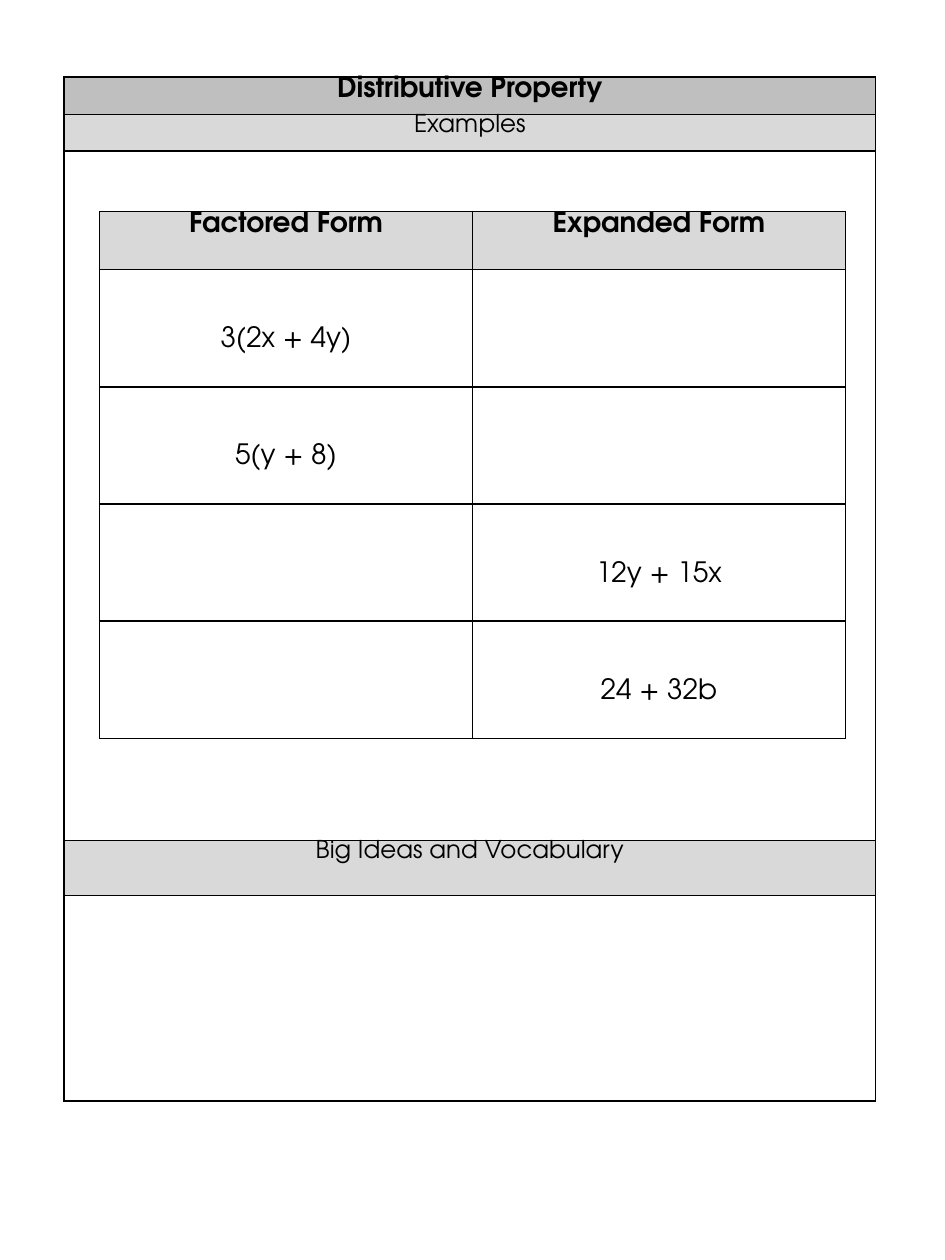
from lxml.etree import SubElement
from pptx import Presentation
from pptx.dml.color import RGBColor
from pptx.enum.text import MSO_ANCHOR, PP_ALIGN
from pptx.oxml.ns import qn
from pptx.util import Inches, Pt

FONT = "TeX Gyre Adventor"
COLORS = {"ink": "000000", "title": "BFBFBF", "heading": "D9D9D9", "paper": "FFFFFF"}


def add_borders(cell):
    """Draw a 1 pt line on all four sides; call before filling the cell."""
    properties = cell._tc.get_or_add_tcPr()
    for side in ("a:lnL", "a:lnR", "a:lnT", "a:lnB"):
        line = SubElement(properties, qn(side), w=str(Pt(1)))
        fill = SubElement(line, qn("a:solidFill"))
        SubElement(fill, qn("a:srgbClr"), val=COLORS["ink"])


def add_grid(slide, left, top, widths, heights):
    """Add a plain bordered table without a banded style."""
    table = slide.shapes.add_table(
        len(heights), len(widths), Inches(left), Inches(top),
        Inches(sum(widths)), Inches(sum(heights))).table
    table.first_row = table.horz_banding = False
    for column, width in zip(table.columns, widths):
        column.width = Inches(width)
    for row, height in zip(table.rows, heights):
        row.height = Inches(height)
    for cell in table.iter_cells():
        cell.margin_top = cell.margin_bottom = 0
        add_borders(cell)
        fill_cell(cell, "paper")
    return table


def fill_cell(cell, color):
    cell.fill.solid()
    cell.fill.fore_color.rgb = RGBColor.from_string(COLORS[color])


def write_cell(cell, text, size=16, bold=False):
    cell.text = text
    paragraph = cell.text_frame.paragraphs[0]
    paragraph.alignment = PP_ALIGN.CENTER
    paragraph.font.name = FONT
    paragraph.font.size = Pt(size)
    paragraph.font.bold = bold
    paragraph.font.color.rgb = RGBColor.from_string(COLORS["ink"])


def add_page_frame(slide):
    table = add_grid(slide, 0.51, 0.61, [6.44], [0.3, 0.29, 5.47, 0.44, 1.63])
    headings = [
        (0, "Distributive Property", "title", 16, True),
        (1, "Examples", "heading", 14, False),
        (3, "Big Ideas and Vocabulary", "heading", 14, False),
    ]
    for row, text, color, size, bold in headings:
        cell = table.cell(row, 0)
        fill_cell(cell, color)
        write_cell(cell, text, size, bold)


def add_examples(slide):
    rows = [("3(2x + 4y)", ""), ("5(y + 8)", ""), ("", "12y + 15x"), ("", "24 + 32b")]
    table = add_grid(slide, 0.79, 1.68, [2.96] * 2, [0.46] + [0.93] * len(rows))
    for column, text in enumerate(("Factored Form", "Expanded Form")):
        cell = table.cell(0, column)
        fill_cell(cell, "heading")
        write_cell(cell, text, bold=True)
    for row, expressions in enumerate(rows, start=1):
        for column, text in enumerate(expressions):
            if text:
                cell = table.cell(row, column)
                cell.vertical_anchor = MSO_ANCHOR.MIDDLE
                cell.margin_top = Inches(0.19)
                write_cell(cell, text)


def main():
    presentation = Presentation()
    presentation.slide_width = Inches(7.5)
    presentation.slide_height = Inches(10)
    slide = presentation.slides.add_slide(presentation.slide_layouts[6])

    # Worksheet frame, then the table of examples on top of it
    add_page_frame(slide)
    add_examples(slide)
    presentation.save("out.pptx")


if __name__ == "__main__":
    main()
